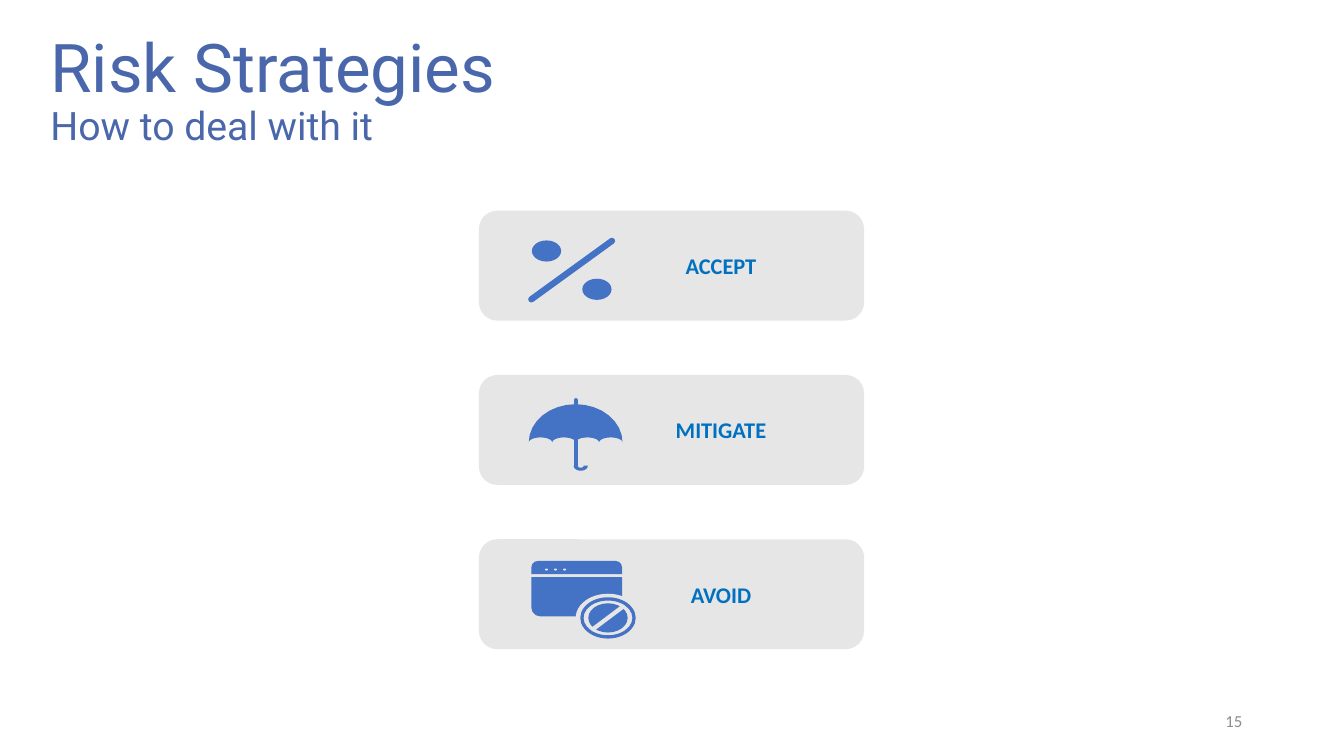
"""Build the Risk Strategies slide: three cards, each with an icon and a label."""
import dataclasses
import math

import lxml.etree
import pptx
import pptx.dml.color
import pptx.enum.shapes
import pptx.enum.text
import pptx.oxml.ns
import pptx.util

Inches = pptx.util.Inches
Color = pptx.dml.color.RGBColor.from_string
Align = pptx.enum.text.PP_ALIGN
Anchor = pptx.enum.text.MSO_ANCHOR
Preset = pptx.enum.shapes.MSO_SHAPE


@dataclasses.dataclass(frozen=True)
class Theme:
    heading: str = "4967AA"
    label: str = "0070C0"
    number: str = "8C8C8C"
    card: str = "E7E6E6"
    icon: str = "4472C4"
    heading_font: str = "Roboto"
    body_font: str = "Calibri"
    title_size: int = 48
    subtitle_size: int = 28
    label_size: int = 16
    number_size: int = 12


theme = Theme()


def add_text(paragraph, text, *, size, color, font=theme.body_font, bold=False, align=Align.LEFT):
    paragraph.alignment = align
    run = paragraph.add_run()
    run.text = text
    run.font.size = pptx.util.Pt(size)
    run.font.name = font
    run.font.bold = bold
    run.font.color.rgb = Color(color)


def arc_points(center, radii, start, end, steps=16):
    angles = [math.radians(start + (end - start) * step / steps) for step in range(steps + 1)]
    return [(Inches(center[0] + radii[0] * math.cos(angle)), Inches(center[1] - radii[1] * math.sin(angle)))
            for angle in angles]


presentation = pptx.Presentation()
presentation.slide_width = Inches(13.33)
presentation.slide_height = Inches(7.5)
slide = presentation.slides.add_slide(presentation.slide_layouts[5])

title = slide.shapes.title
title.left, title.top, title.width, title.height = map(Inches, (0.4, 0.22, 11.5, 1.38))
title.text_frame.auto_size = pptx.enum.text.MSO_AUTO_SIZE.NONE
title.text_frame.vertical_anchor = Anchor.MIDDLE
heading = title.text_frame.paragraphs[0]
heading.line_spacing = 0.9
add_text(heading, "Risk Strategies", size=theme.title_size, color=theme.heading, font=theme.heading_font)
heading.add_line_break()
add_text(heading, "How to deal with it", size=theme.subtitle_size, color=theme.heading, font=theme.heading_font)

page_number = slide.shapes.add_textbox(Inches(9.42), Inches(6.95), Inches(3), Inches(0.4)).text_frame
page_number.word_wrap = True
page_number.vertical_anchor = Anchor.MIDDLE
add_text(page_number.paragraphs[0], "15", size=theme.number_size, color=theme.number, align=Align.RIGHT)

strategies = slide.shapes.add_group_shape().shapes
filled_parts = []

for row, strategy in enumerate(("ACCEPT", "MITIGATE", "AVOID")):
    card = strategies.add_shape(Preset.ROUNDED_RECTANGLE, Inches(4.75), Inches(2.09 + 1.63 * row),
                                Inches(3.82), Inches(1.09))
    filled_parts.append((card, theme.card))
    label = card.text_frame
    label.word_wrap = True
    label.margin_left = Inches(1.08)
    label.vertical_anchor = Anchor.MIDDLE
    add_text(label.paragraphs[0], strategy, size=theme.label_size, color=theme.label,
             bold=True, align=Align.CENTER)

umbrella_x, canopy_y, canopy_width, canopy_height = 5.71, 4.39, 0.93, 0.38
scallops = 4
scallop_width = canopy_width / scallops
canopy = arc_points((umbrella_x, canopy_y), (canopy_width / 2, canopy_height), 0, 180)
for scallop in range(scallops):
    scallop_x = umbrella_x - canopy_width / 2 + (scallop + 0.5) * scallop_width
    canopy += arc_points((scallop_x, canopy_y), (scallop_width / 2, 0.05), 180, 0)

stem_end, hook_radius = 4.62, 0.05
hook_center = (umbrella_x + hook_radius, stem_end)
hook = arc_points(hook_center, (0.07, 0.05), 180, 360) + arc_points(hook_center, (0.03, 0.02), 360, 180)

for outline in (canopy, hook):
    pen = strategies.build_freeform(*outline[0])
    pen.add_line_segments(outline[1:])
    filled_parts.append((pen.convert_to_shape(), theme.icon))

window_x, window_width = 5.72, 0.9
ban_x, ban_y = 6.03, 6.13
percent_dots = [(Preset.OVAL, x, y, 0.29, 0.21, theme.icon, ()) for x, y in ((5.42, 2.49), (5.92, 2.87))]
window = [(Preset.ROUND_2_SAME_RECTANGLE, window_x, 5.63, window_width, 0.13, theme.icon, (0.5, 0)),
          (Preset.ROUND_2_SAME_RECTANGLE, window_x, 5.92, window_width, 0.39, theme.icon, (0, 0.23))]
window_dots = [(Preset.OVAL, 5.42 + 0.09 * dot, 5.65, 0.03, 0.02, theme.card, ()) for dot in range(3)]
ban_sign = [(Preset.OVAL, ban_x, ban_y, 0.64, 0.48, theme.card, ()),
            (Preset.DONUT, ban_x, ban_y, 0.55, 0.41, theme.icon, (0.08,)),
            (Preset.OVAL, ban_x, ban_y, 0.39, 0.29, theme.icon, ())]

for preset, center_x, center_y, width, height, color, adjustments in percent_dots + window + window_dots + ban_sign:
    part = strategies.add_shape(preset, Inches(center_x - width / 2), Inches(center_y - height / 2),
                                Inches(width), Inches(height))
    for index, adjustment in enumerate(adjustments):
        part.adjustments[index] = adjustment
    filled_parts.append((part, color))

for part, color in filled_parts:
    part.fill.solid()
    part.fill.fore_color.rgb = Color(color)
    part.line.fill.background()
    part.shadow.inherit = False

percent_bar = ((5.27, 2.97), (6.07, 2.39), 4.5, theme.icon, "rnd")
umbrella_stem = ((umbrella_x, 3.97), (umbrella_x, stem_end), 3, theme.icon, "rnd")
ban_slash = ((ban_x - 0.16, ban_y + 0.12), (ban_x + 0.16, ban_y - 0.12), 3, theme.card, "flat")

for start, end, thickness, color, cap in (percent_bar, umbrella_stem, ban_slash):
    stroke = strategies.add_connector(pptx.enum.shapes.MSO_CONNECTOR.STRAIGHT, *map(Inches, start + end))
    stroke.line.width = pptx.util.Pt(thickness)
    stroke.line.color.rgb = Color(color)
    properties = stroke._element.spPr
    properties.find(pptx.oxml.ns.qn("a:ln")).set("cap", cap)
    lxml.etree.SubElement(properties, pptx.oxml.ns.qn("a:effectLst"))

presentation.save("out.pptx")
